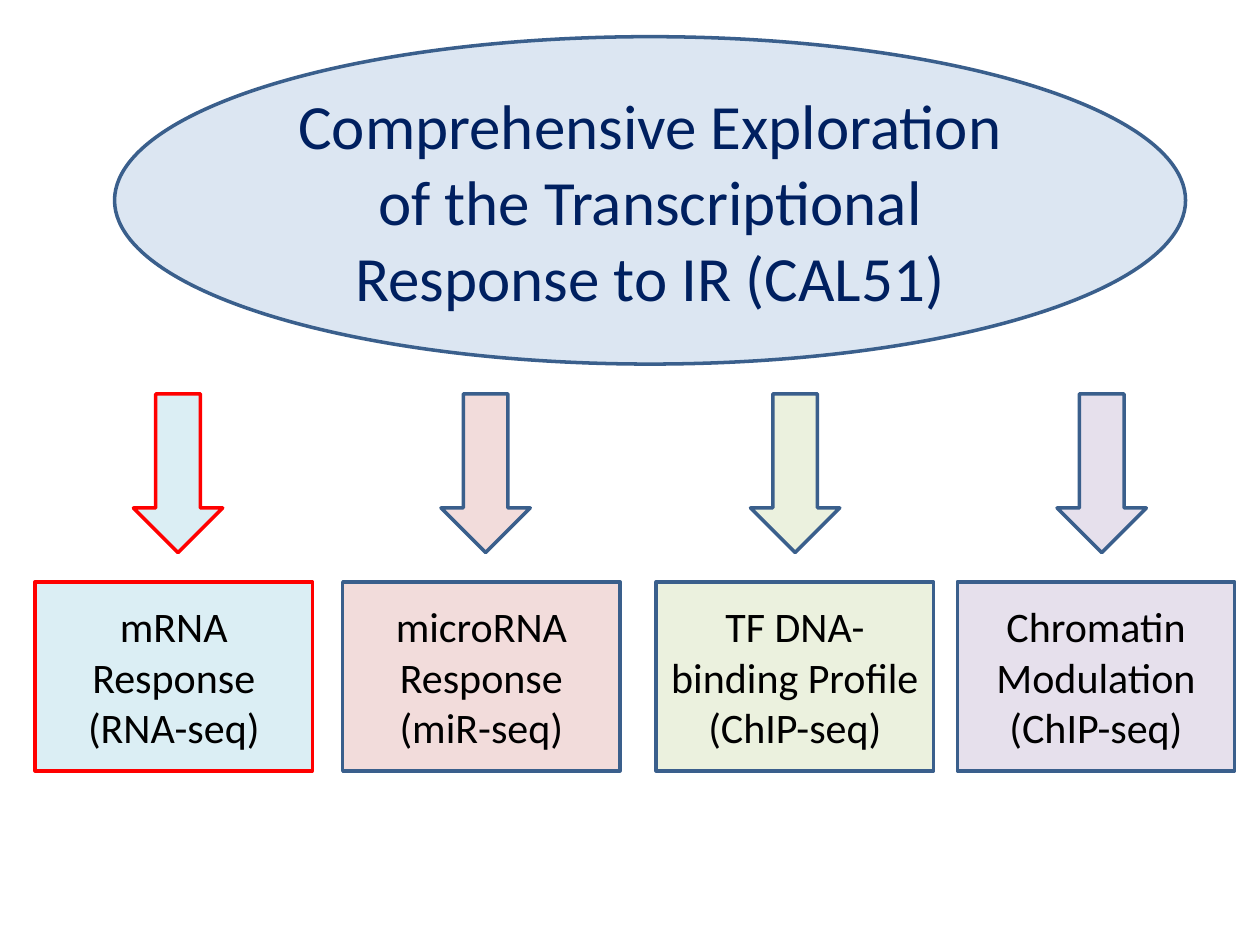
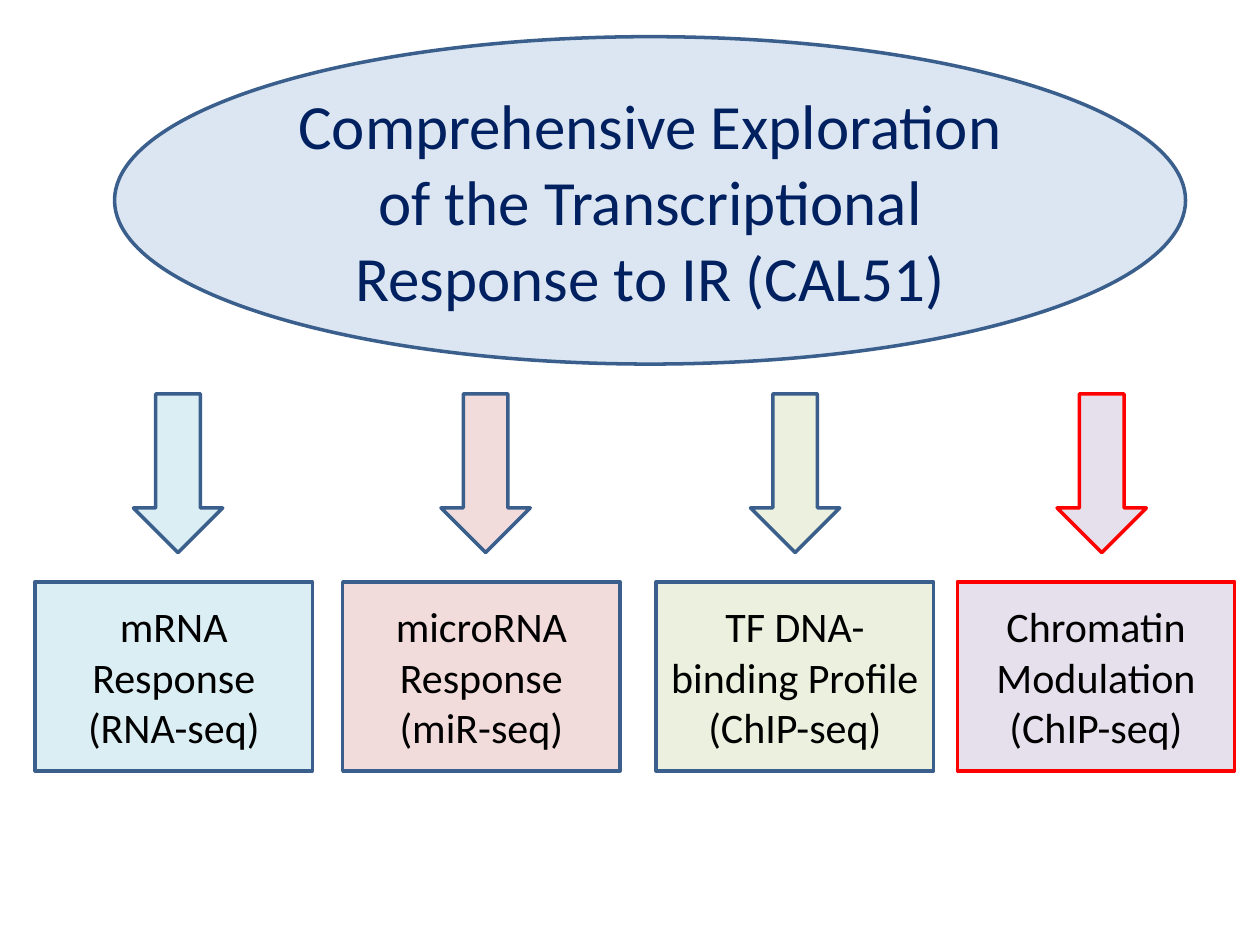
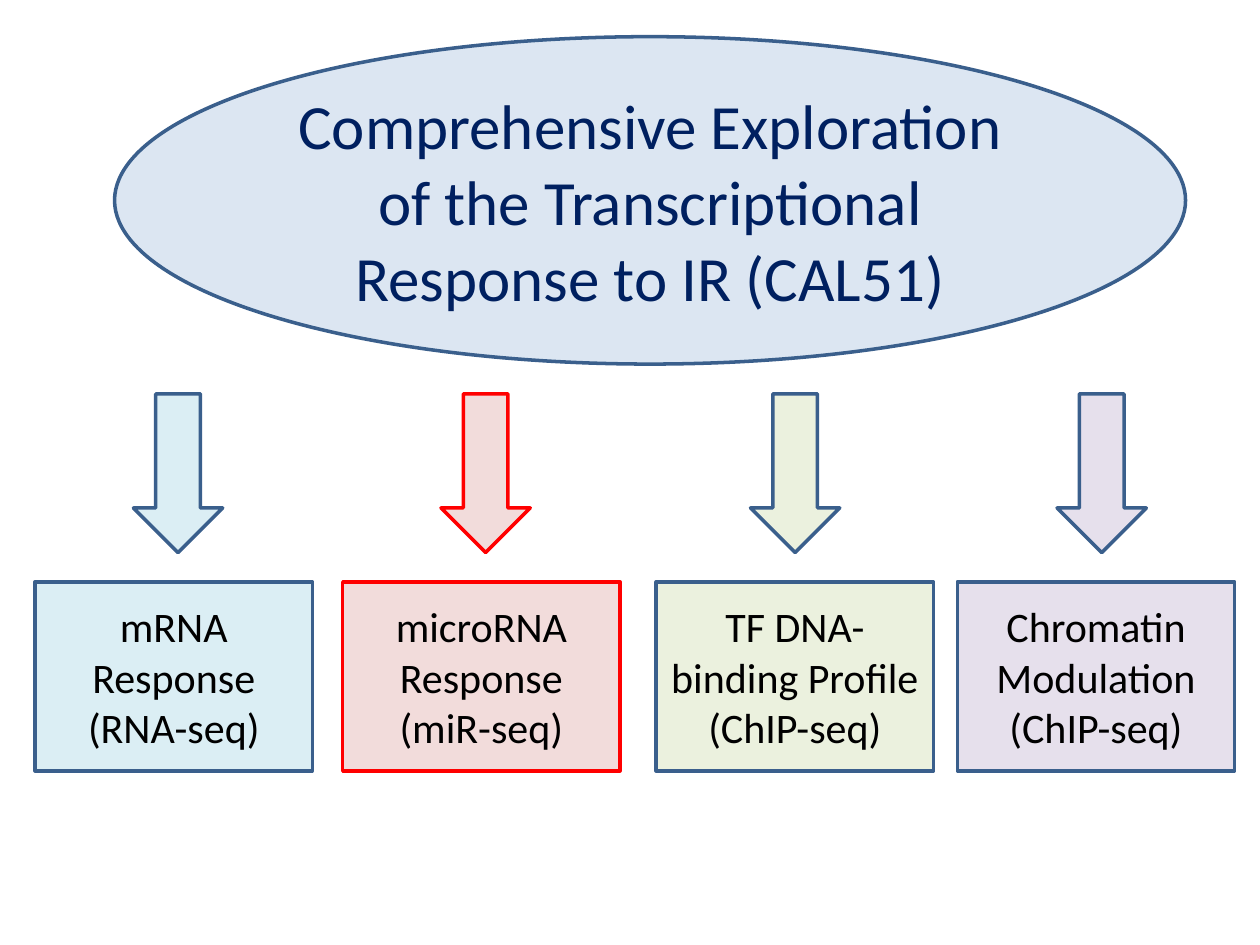
from pptx import Presentation
from pptx import util as u
from pptx.dml.color import RGBColor
from pptx.enum import shapes, text

COLORS = {
    "title_fill": "DCE6F2", "title_text": "002060", "body_text": "000000",
    "outline": "3A5F8C", "highlight": "FF0000",
    "mrna": "DBEEF4", "microrna": "F2DCDB", "binding": "EBF1DE", "chromatin": "E6E0EC",
}
FONT = "Calibri"
TITLE = "Comprehensive Exploration of the Transcriptional Response to IR (CAL51)"

# Boxes are (left, top, width, height) in centimetres
TITLE_BOX = (2.31, 0.74, 21.59, 6.6)
BRANCH_TOP, BRANCH_WIDTH, BRANCH_HEIGHT = 7.94, 5.59, 7.6
ARROW_WIDTH, ARROW_HEIGHT = 1.8, 3.2
LABEL_HEIGHT = 3.81

# Branch: colour key, left edge, arrow offset from that edge, label lines
BRANCHES = [
    ("mrna", 0.71, 1.98, ["mRNA Response", "(RNA-seq)"]),
    ("microrna", 6.91, 1.98, ["microRNA Response", "(miR-seq)"]),
    ("binding", 13.23, 1.9, ["TF DNA-binding Profile ", "(ChIP-seq)"]),
    ("chromatin", 19.3, 2.01, ["Chromatin Modulation", "(ChIP-seq)"]),
]
HIGHLIGHTS = ["mrna", "chromatin", "microrna"]  # one per slide


def color(key):
    return RGBColor.from_string(COLORS[key])


def add_box(slide, kind, box, fill, line="outline"):
    shape = slide.shapes.add_shape(kind, *(u.Cm(length) for length in box))
    shape.shadow.inherit = False
    shape.fill.solid()
    shape.fill.fore_color.rgb = color(fill)
    shape.line.color.rgb = color(line)
    shape.line.width = u.Pt(2)
    return shape


def write_text(shape, lines, size=24, font_color="body_text"):
    frame = shape.text_frame
    frame.word_wrap = True
    frame.vertical_anchor = text.MSO_ANCHOR.MIDDLE
    frame.text = "\n".join(lines)
    for paragraph in frame.paragraphs:
        paragraph.alignment = text.PP_ALIGN.CENTER
        for run in paragraph.runs:
            run.font.name = FONT
            run.font.size = u.Pt(size)
            run.font.color.rgb = color(font_color)


def add_title(slide, box):
    ellipse = add_box(slide, shapes.MSO_SHAPE.OVAL, box, "title_fill")
    write_text(ellipse, [TITLE], size=36, font_color="title_text")


def add_branch(slide, box, fill, line, arrow_offset, lines):
    left, top, width, height = box
    # Arrow at the top of the branch
    arrow_box = (left + arrow_offset, top, ARROW_WIDTH, ARROW_HEIGHT)
    add_box(slide, shapes.MSO_SHAPE.DOWN_ARROW, arrow_box, fill, line)
    # Label at the bottom of the branch
    label_box = (left, top + height - LABEL_HEIGHT, width, LABEL_HEIGHT)
    label = add_box(slide, shapes.MSO_SHAPE.RECTANGLE, label_box, fill, line)
    write_text(label, lines)


def add_overview_slide(presentation, highlighted):
    slide = presentation.slides.add_slide(presentation.slide_layouts[6])
    add_title(slide, TITLE_BOX)
    for key, left, arrow_offset, lines in BRANCHES:
        line = "highlight" if key == highlighted else "outline"
        box = (left, BRANCH_TOP, BRANCH_WIDTH, BRANCH_HEIGHT)
        add_branch(slide, box, key, line, arrow_offset, lines)


def main():
    presentation = Presentation()
    presentation.slide_width = u.Cm(25.4)
    presentation.slide_height = u.Cm(19.05)
    for highlighted in HIGHLIGHTS:
        add_overview_slide(presentation, highlighted)
    presentation.save("out.pptx")


if __name__ == "__main__":
    main()
